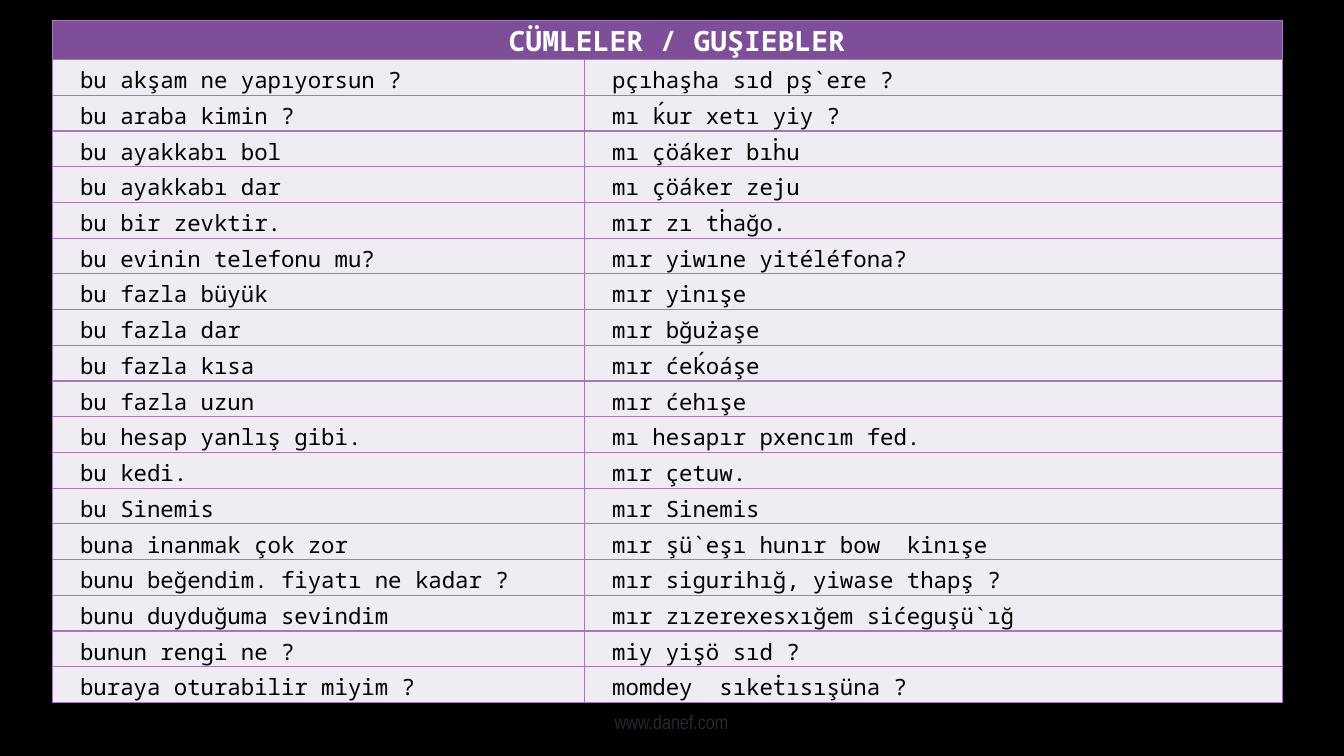
from lxml import etree
from pptx import Presentation
from pptx.dml.color import RGBColor
from pptx.enum.text import MSO_ANCHOR, PP_ALIGN
from pptx.oxml.ns import qn
from pptx.util import Cm, Pt

CENTER, LEFT = PP_ALIGN.CENTER, PP_ALIGN.LEFT
MIDDLE, BOTTOM = MSO_ANCHOR.MIDDLE, MSO_ANCHOR.BOTTOM

BLACK = RGBColor(0x00, 0x00, 0x00)
WHITE = RGBColor(0xFF, 0xFF, 0xFF)
PURPLE = RGBColor(0x7E, 0x4E, 0x99)
LILAC = RGBColor(0xA3, 0x79, 0xBB)
PALE = RGBColor(0xF0, 0xEC, 0xF3)
SLATE = RGBColor(0x22, 0x2A, 0x35)

TABLE_FONT = "Noto Sans Mono"
FOOTER_FONT = "Arial Narrow"

COLUMN_WIDTHS = (Cm(13.41), Cm(17.6))
HEADER_HEIGHT = Cm(0.98)
ROW_HEIGHT = Cm(0.9)
HEADING = "CÜMLELER / GUŞIEBLER"
SENTENCES = [
    ("bu akşam ne yapıyorsun ?", "pçıhaşha sıd pş`ere ?"),
    ("bu araba kimin ?", "mı ḱur xetı yiy ?"),
    ("bu ayakkabı bol", "mı çöáker bıḣu"),
    ("bu ayakkabı dar", "mı çöáker zeju"),
    ("bu bir zevktir.", "mır zı tḣağo."),
    ("bu evinin telefonu mu?", "mır yiwıne yitéléfona?"),
    ("bu fazla büyük", "mır yinışe"),
    ("bu fazla dar", "mır bğużaşe"),
    ("bu fazla kısa", "mır ćeḱoáşe"),
    ("bu fazla uzun", "mır ćehışe"),
    ("bu hesap yanlış gibi.", "mı hesapır pxencım fed."),
    ("bu kedi.", "mır çetuw."),
    ("bu Sinemis", "mır Sinemis"),
    ("buna inanmak çok zor", "mır şü`eşı hunır bow  kinışe"),
    ("bunu beğendim. fiyatı ne kadar ?", "mır sigurihığ, yiwase thapş ?"),
    ("bunu duyduğuma sevindim", "mır zızerexesxığem sićeguşü`ığ"),
    ("bunun rengi ne ?", "miy yişö sıd ?"),
    ("buraya oturabilir miyim ?", "momdey  sıkeṫısışüna ?"),
]


def write_text(text_frame, text, *, font, size, color, bold=False,
               align=LEFT, line_spacing=1.0):
    paragraph = text_frame.paragraphs[0]
    paragraph.alignment = align
    paragraph.line_spacing = line_spacing
    run = paragraph.add_run()
    run.text = text
    run.font.name = font
    run.font.size = Pt(size)
    run.font.bold = bold
    run.font.color.rgb = color


def add_borders(cell):
    properties = cell._tc.get_or_add_tcPr()
    for side in ("a:lnL", "a:lnR", "a:lnT", "a:lnB"):
        line = etree.SubElement(properties, qn(side), w=str(Pt(1)))
        fill = etree.SubElement(line, qn("a:solidFill"))
        etree.SubElement(fill, qn("a:srgbClr"), val=str(LILAC))


def style_cell(cell, fill_color, indent):
    add_borders(cell)
    cell.fill.solid()
    cell.fill.fore_color.rgb = fill_color
    cell.vertical_anchor = BOTTOM
    cell.margin_left = indent
    cell.margin_right = cell.margin_top = Cm(0.03)
    cell.margin_bottom = 0


def add_sentence_table(slide):
    height = HEADER_HEIGHT + ROW_HEIGHT * len(SENTENCES)
    frame = slide.shapes.add_table(len(SENTENCES) + 1, len(COLUMN_WIDTHS),
                                   Cm(1.32), Cm(0.52), sum(COLUMN_WIDTHS), height)
    table = frame.table
    for column, width in zip(table.columns, COLUMN_WIDTHS):
        column.width = width
    for row in table.rows:
        row.height = ROW_HEIGHT
    table.rows[0].height = HEADER_HEIGHT

    # Heading across both columns
    for cell in table.rows[0].cells:
        style_cell(cell, PURPLE, Cm(0.5))
    heading = table.cell(0, 0)
    heading.merge(table.cell(0, 1))
    write_text(heading.text_frame, HEADING, font=TABLE_FONT, size=20,
               color=WHITE, bold=True, align=CENTER)

    # Sentence pairs
    for row_index, pair in enumerate(SENTENCES, start=1):
        for column_index, sentence in enumerate(pair):
            cell = table.cell(row_index, column_index)
            style_cell(cell, PALE, Cm(0.7))
            write_text(cell.text_frame, sentence, font=TABLE_FONT, size=16,
                       color=BLACK)


def add_footer(slide):
    box = slide.shapes.add_textbox(Cm(7.92), Cm(17.45), Cm(18.01), Cm(1.6))
    box.text_frame.word_wrap = True
    box.text_frame.vertical_anchor = MIDDLE
    write_text(box.text_frame, "www.danef.com", font=FOOTER_FONT, size=14,
               color=SLATE, align=CENTER, line_spacing=0.7)


def main():
    presentation = Presentation()
    presentation.slide_width = Cm(33.87)
    presentation.slide_height = Cm(19.05)
    slide = presentation.slides.add_slide(presentation.slide_layouts[6])
    slide.background.fill.solid()
    slide.background.fill.fore_color.rgb = BLACK

    add_footer(slide)
    add_sentence_table(slide)
    presentation.save("out.pptx")


if __name__ == "__main__":
    main()
